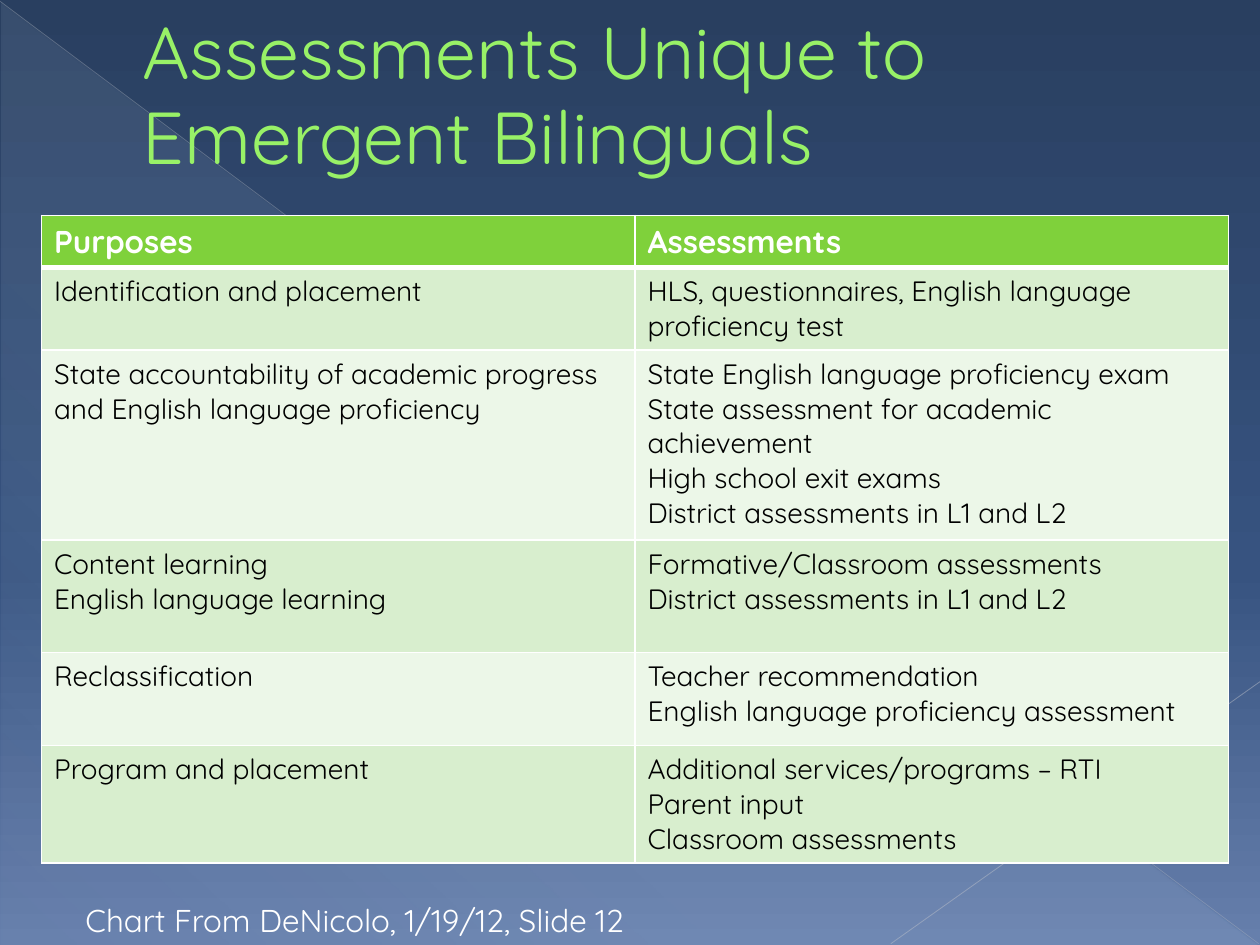
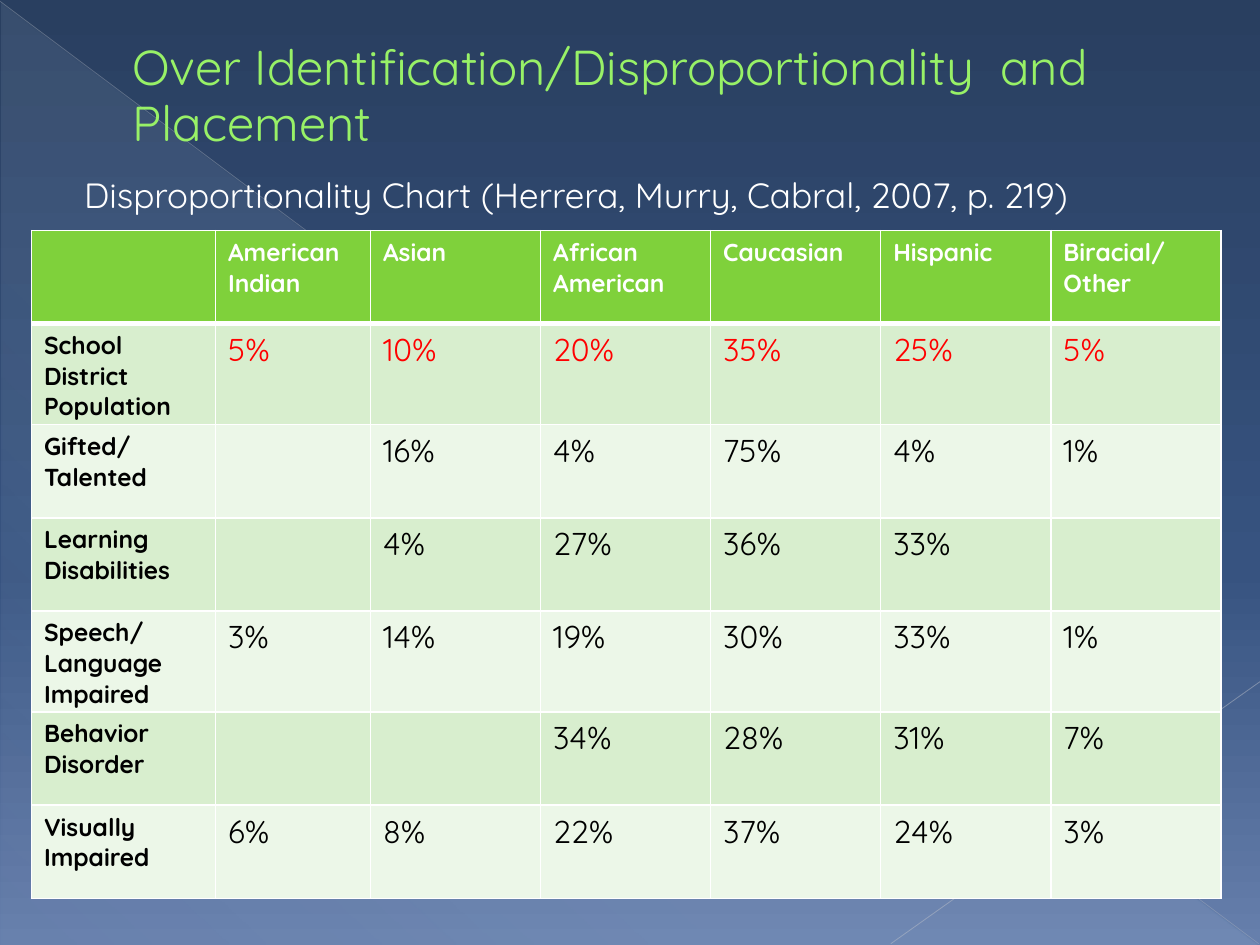
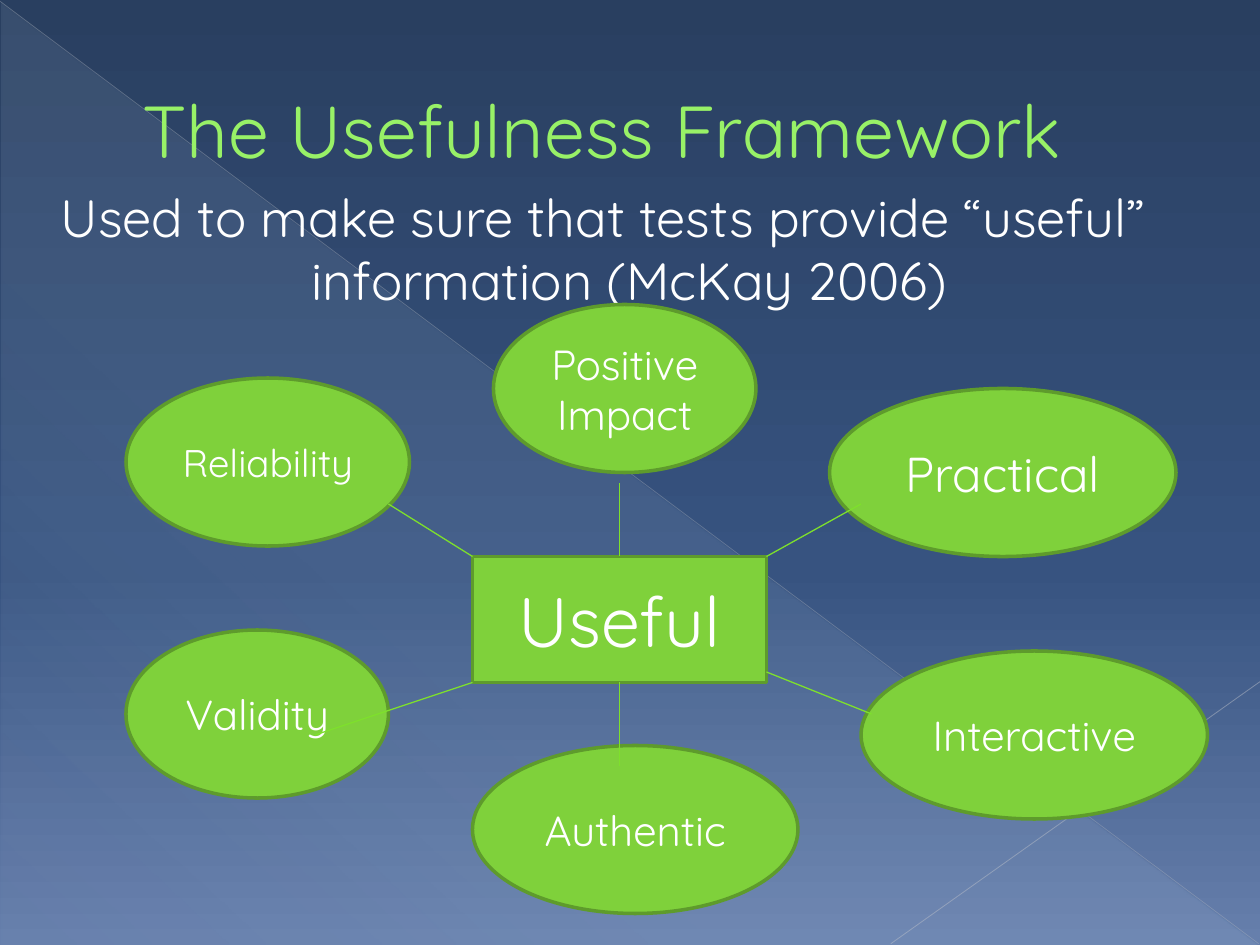
from lxml.etree import SubElement
from pptx import Presentation
from pptx.dml.color import RGBColor
from pptx.enum.shapes import MSO_CONNECTOR, MSO_SHAPE
from pptx.enum.text import MSO_ANCHOR, MSO_AUTO_SIZE, PP_ALIGN
from pptx.oxml.ns import qn
from pptx.util import Emu, Inches, Pt

LEFT, MID = PP_ALIGN.LEFT, PP_ALIGN.CENTER
TOP, CENTRE = MSO_ANCHOR.TOP, MSO_ANCHOR.MIDDLE
RECT, OVAL = MSO_SHAPE.RECTANGLE, MSO_SHAPE.OVAL
WEDGE, LINE = MSO_SHAPE.RIGHT_TRIANGLE, MSO_CONNECTOR.STRAIGHT
WIDE, HIGH = 10, 7.5
FONT = "Quicksand"
HUES = {
    "title": "98F167", "edge": "589129", "white": "FFFFFF", "black": "000000",
    "red": "FF0000", "green": "7FD13B", "rim": "5E9B2C", "link": "7EE02C",
    "odd": "D8EECE", "even": "ECF7E8", "glow": "D6ECFF",
    "sky": "293F60", "dusk": "375380", "haze": "667FAC",
    "long": "B7BCC5", "short": "BFC3CB",
}
SKY = [(0, "sky", 100), (60, "dusk", 100), (100, "haze", 100)]
GLOW = [(0, "glow", 10), (70, "glow", 8), (100, "glow", 1)]
RAYS = [((0, 0.01), (9.99, 7.49), "long", 0.39, 35),
        ((10, 5.41), (7.07, 7.49), "short", 0.47, 45)]

USES = [
    ("Purposes", "Assessments"),
    ("Identification and placement",
     "HLS, questionnaires, English language proficiency test"),
    ("State accountability of academic progress and English language proficiency",
     "State English language proficiency exam\n"
     "State assessment for academic achievement\n"
     "High school exit exams\nDistrict assessments in L1 and L2"),
    ("Content learning\nEnglish language learning",
     "Formative/Classroom assessments\nDistrict assessments in L1 and L2"),
    ("Reclassification",
     "Teacher recommendation\nEnglish language proficiency assessment"),
    ("Program and placement",
     "Additional services/programs – RTI\nParent input\nClassroom assessments"),
]
SHARES = [
    ("", "American Indian", "Asian", "African American", "Caucasian", "Hispanic",
     "Biracial/Other"),
    ("School District Population", "5%", "10%", "20%", "35%", "25%", "5%"),
    ("Gifted/Talented", "", "16%", "4%", "75%", "4%", "1%"),
    ("Learning Disabilities", "", "4%", "27%", "36%", "33%", ""),
    ("Speech/Language Impaired", "3%", "14%", "19%", "30%", "33%", "1%"),
    ("Behavior Disorder", "", "", "34%", "28%", "31%", "7%"),
    ("Visually Impaired", "6%", "8%", "22%", "37%", "24%", "3%"),
]
CELL = 1 / 12
NODES = [
    ("Useful", RECT, 45, 53, 28, 12, 40),
    ("Positive Impact", OVAL, 47, 29, 25, 16, 24),
    ("Reliability", OVAL, 12, 36, 27, 16, 22),
    ("Validity", OVAL, 12, 60, 25, 16, 24),
    ("Authentic", OVAL, 45, 71, 31, 16, 24),
    ("Interactive", OVAL, 82, 62, 33, 16, 24),
    ("Practical", OVAL, 79, 37, 33, 16, 28),
]
LINKS = [((59, 53), (59, 46)), ((45, 53), (37, 48)), ((45, 65), (30, 70)),
         ((59, 65), (59, 73)), ((73, 53), (82, 48)), ((73, 64), (83, 68))]


def rgb(hue):
    return RGBColor.from_string(HUES[hue])


def tint(node, hue, alpha=100):
    clr = SubElement(node, qn("a:srgbClr"), val=HUES[hue])
    if alpha < 100:
        SubElement(clr, qn("a:alpha"), val=str(alpha * 1000))


def blend(owner, fill, stops, angle):
    fill.gradient()
    node = owner.element.xpath(".//a:gradFill")[0]
    for kid in list(node):
        node.remove(kid)
    group = SubElement(node, qn("a:gsLst"))
    for pos, hue, alpha in stops:
        tint(SubElement(group, qn("a:gs"), pos=str(pos * 1000)), hue, alpha)
    SubElement(node, qn("a:lin"), ang=str(angle * 60000), scaled="0")


def write(frame, text, size=18, hue="white", bold=False, align=LEFT, anchor=TOP,
          left=0, hang=0, before=0, space=None, edge=None):
    frame.word_wrap = True
    frame.vertical_anchor = anchor
    for i, line in enumerate(text.split("\n")):
        para = frame.add_paragraph() if i else frame.paragraphs[0]
        para.alignment = align
        para.space_before = Pt(before)
        para.line_spacing = space
        props = para._p.get_or_add_pPr()
        props.set("marL", str(Inches(left)))
        props.set("indent", str(Inches(hang)))
        run = para.add_run()
        run.text = line
        font = run.font
        font.name, font.size, font.bold = FONT, Pt(size), bold
        font.color.rgb = rgb(hue)
        if edge:
            rim = run._r.get_or_add_rPr().makeelement(qn("a:ln"), w=str(Pt(0.5)))
            tint(SubElement(rim, qn("a:solidFill")), edge)
            run._r.get_or_add_rPr().insert(0, rim)


def box(slide, text, x, y, w, h, **form):
    item = slide.shapes.add_textbox(*map(Inches, (x, y, w, h)))
    write(item.text_frame, text, **form)


def join(slide, start, end, hue, width, alpha=100):
    item = slide.shapes.add_connector(LINE, *map(Inches, start + end))
    item.line.width = Pt(width)
    item.line.color.rgb = rgb(hue)
    if alpha < 100:
        clr = item.element.xpath(".//a:ln//a:srgbClr")[0]
        SubElement(clr, qn("a:alpha"), val=str(alpha * 1000))
    SubElement(item.element.spPr, qn("a:effectLst"))
    return item


def shape(slide, kind, x, y, w, h):
    item = slide.shapes.add_shape(kind, *map(Inches, (x, y, w, h)))
    item.shadow.inherit = False
    return item


def dress(layout, slide):
    blend(layout, layout.background.fill, SKY, 90)
    for hold in list(layout.placeholders):
        if hold.placeholder_format.idx:
            hold.element.getparent().remove(hold.element)
    wedge = shape(slide, WEDGE, 0.01, 0.02, 9.98, 7.48)
    blend(wedge, wedge.fill, GLOW, 133)
    wedge.line.fill.background()
    parts = [wedge] + [join(slide, *ray) for ray in RAYS]
    for i, part in enumerate(parts):
        layout.shapes.element.insert(2 + i, part.element)


def head(slide, text, x, y, size):
    title = slide.shapes.title
    title.left, title.top, title.width, title.height = map(
        Inches, (x, y, 0.9 * WIDE, 1.53))
    write(title.text_frame, text, size=size, hue="title", anchor=CENTRE,
          left=0.53, space=0.96, edge="edge")
    title.text_frame.auto_size = MSO_AUTO_SIZE.NONE


def border(cell, row):
    props = cell._tc.get_or_add_tcPr()
    thick = {"L": 1, "R": 1, "T": 3 if row == 1 else 1, "B": 1 if row else 3}
    for i, (side, width) in enumerate(thick.items()):
        line = props.makeelement(qn("a:ln" + side), w=str(Pt(width)))
        tint(SubElement(line, qn("a:solidFill")), "white")
        props.insert(i, line)


def grid(slide, data, x, y, cols, rows, form):
    table = slide.shapes.add_table(
        len(rows), len(cols),
        *map(Inches, (x, y, sum(cols), sum(rows)))).table
    for col, width in zip(table.columns, cols):
        col.width = Inches(width)
    for r, (line, height) in enumerate(zip(data, rows)):
        table.rows[r].height = Inches(height)
        for c, text in enumerate(line):
            cell = table.cell(r, c)
            cell.fill.solid()
            cell.fill.fore_color.rgb = rgb(
                "green" if r == 0 else "odd" if r % 2 else "even")
            border(cell, r)
            if text:
                write(cell.text_frame, text, **form(r, c))


def use_form(r, c):
    if r == 0:
        return {"size": 18, "bold": True}
    return {"size": 16, "hue": "black"}


def share_form(r, c):
    if r == 0 or c == 0:
        return {"size": 14, "bold": True, "hue": "black" if r else "white"}
    return {"size": 18, "hue": "red" if r == 1 else "black"}


def uses(slide):
    head(slide, "Assessments Unique to  Emergent Bilinguals", 0.5, 0, 42)
    grid(slide, USES, 0.33, 1.71, [4.71] * 2,
         [0.32, 0.52, 1.51, 0.89, 0.74, 0.89], use_form)
    box(slide, "Chart From DeNicolo, 1/19/12, Slide 12", 0.58, 7.1, 5.75, 0.4)


def shares(slide):
    head(slide, "Over Identification/Disproportionality  and Placement", 0.42, 0, 28)
    box(slide, "Disproportionality Chart (Herrera, Murry, Cabral, 2007, p. 219)",
        0.5, 1.33, 9, 0.5, size=20, left=0.49, hang=-0.42, before=4)
    grid(slide, SHARES, 0.25, 1.83, [1.46, 1.23] + [1.35] * 5,
         [0.74] + [0.79, 0.74, 0.74] * 2, share_form)


def useful(slide):
    head(slide, "The Usefulness Framework", 0.5, 0.29, 42)
    box(slide, "Used to make sure that tests provide “useful” information (McKay 2006)",
        0.25, 1.42, 9, 1.17, size=30, align=MID, left=0.49, hang=-0.42, before=6)
    for text, kind, x, y, w, h, size in NODES:
        node = shape(slide, kind, *(CELL * n for n in (x, y, w, h)))
        node.fill.solid()
        node.fill.fore_color.rgb = rgb("green")
        node.line.color.rgb = rgb("rim")
        node.line.width = Pt(2)
        write(node.text_frame, text, size=size, align=MID, anchor=CENTRE)
    for ends in LINKS:
        start, end = (tuple(CELL * n for n in point) for point in ends)
        join(slide, start, end, "link", 0.75)


def main():
    deck = Presentation()
    deck.slide_width, deck.slide_height = Emu(Inches(WIDE)), Emu(Inches(HIGH))
    layout = deck.slide_layouts[5]
    for i, build in enumerate((uses, shares, useful)):
        slide = deck.slides.add_slide(layout)
        if i == 0:
            dress(layout, slide)
            for hold in list(slide.placeholders):
                if hold.placeholder_format.idx:
                    hold.element.getparent().remove(hold.element)
        build(slide)
    deck.save("out.pptx")


if __name__ == "__main__":
    main()
